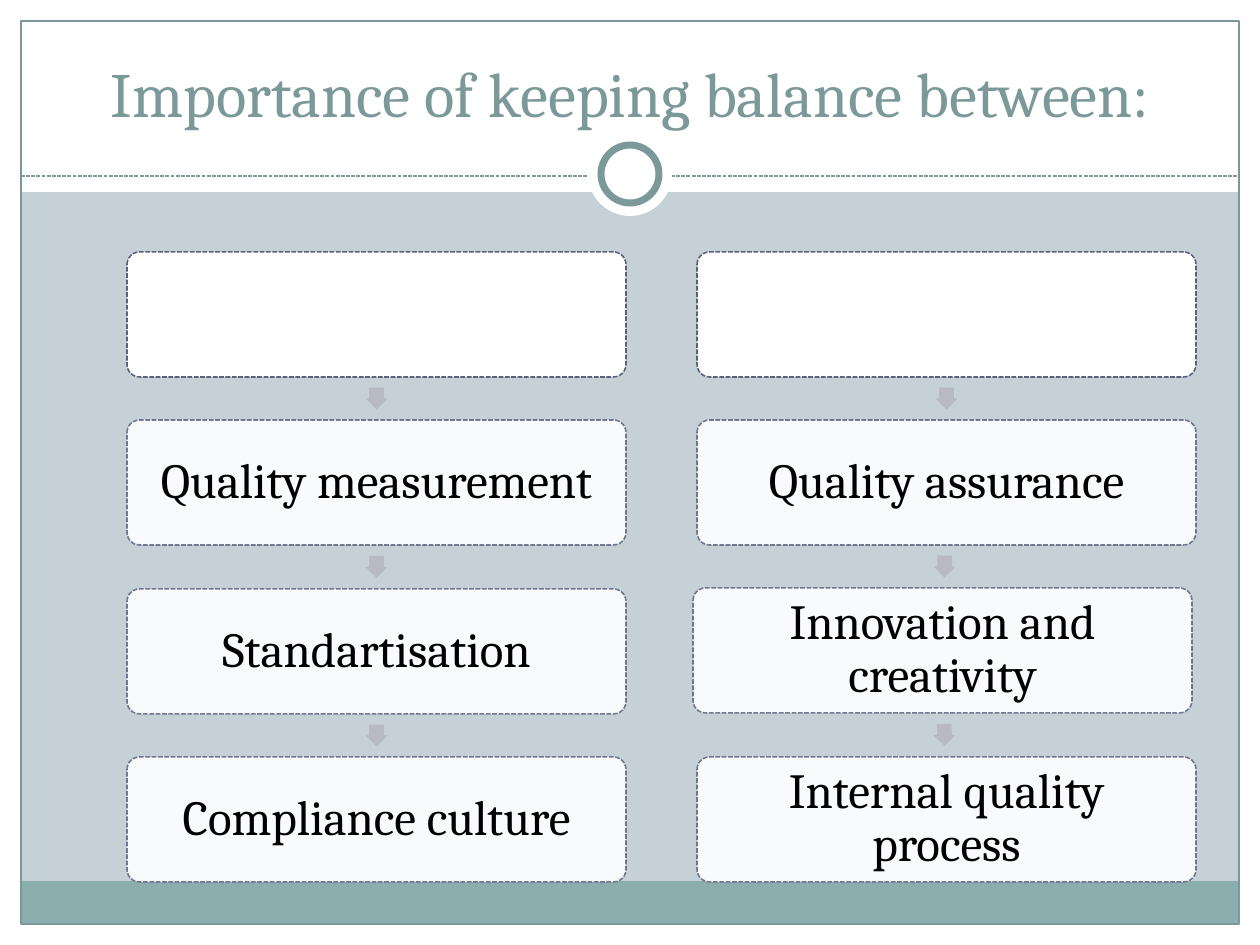
from math import atan2, degrees
from pptx import Presentation
from pptx.dml.color import RGBColor
from pptx.enum.dml import MSO_LINE
from pptx.enum.shapes import MSO_CONNECTOR, MSO_SHAPE as Preset
from pptx.enum.text import MSO_ANCHOR as Anchor, PP_ALIGN as Align
from pptx.oxml.ns import qn
from pptx.util import Emu, Pt
from lxml.etree import SubElement

PX = 914400 / 126
WIDTH, HEIGHT = 1260, 945
MARGIN = 21

WHITE = RGBColor(0xFF, 0xFF, 0xFF)
BLACK = RGBColor(0x00, 0x00, 0x00)
MIST = RGBColor(0xC5, 0xD1, 0xD7)
TEAL = RGBColor(0x7C, 0x99, 0x9A)
FOOTER = RGBColor(0x8C, 0xAD, 0xAE)
HEAD_EDGE = RGBColor(0x5B, 0x61, 0x7A)
STEP_EDGE = RGBColor(0x64, 0x6B, 0x86)
ARROW = RGBColor(0xB8, 0xBA, 0xC3)

COLUMNS = [
    (127, ["", "Quality measurement", "Standartisation", "Compliance culture"]),
    (697, ["", "Quality assurance", "Innovation and creativity", "Internal quality process"]),
]
NUDGES = {"Innovation and creativity": (-4, -1)}
BOX_WIDTH, BOX_HEIGHT = 499, 125
FIRST_TOP, PITCH = 252, 168.4
ARROW_SIZE = 22


def px(length):
    return Emu(round(length * PX))


def write(frame, text, size, color, font="Cambria", anchor=Anchor.MIDDLE, inset=9, spacing=1.0):
    frame.word_wrap = True
    frame.vertical_anchor = anchor
    frame.margin_left = frame.margin_right = px(inset)
    frame.margin_top = frame.margin_bottom = px(inset)
    para = frame.paragraphs[0]
    para.alignment = Align.CENTER
    para.line_spacing = spacing
    span = para.add_run()
    span.text = text
    span.font.name = font
    span.font.size = Pt(size)
    span.font.color.rgb = color


class Painter:
    def __init__(self, page):
        self.page = page

    def background(self, color):
        fill = self.page.background.fill
        fill.solid()
        fill.fore_color.rgb = color

    def shape(self, preset, left, top, width, height, fill=None, line=None, weight=0.75,
              dashed=False, alpha=None, adjust=(), rotation=0):
        shape = self.page.shapes.add_shape(preset, px(left), px(top), px(width), px(height))
        shape.shadow.inherit = False
        shape.rotation = rotation
        for index, value in enumerate(adjust):
            shape.adjustments[index] = value
        if fill is None:
            shape.fill.background()
        else:
            shape.fill.solid()
            shape.fill.fore_color.rgb = fill
        if line is None:
            shape.line.fill.background()
        else:
            self.stroke(shape.line, line, weight, dashed)
        if alpha is not None:
            for color in shape.element.spPr.iter(qn("a:srgbClr")):
                SubElement(color, qn("a:alpha"), val=str(alpha * 1000))
        return shape

    def stroke(self, line, color, weight, dashed):
        line.color.rgb = color
        line.width = Pt(weight)
        if dashed:
            line.dash_style = MSO_LINE.SQUARE_DOT

    def rule(self, left, right, y):
        rule = self.page.shapes.add_connector(
            MSO_CONNECTOR.STRAIGHT, px(left), px(y), px(right), px(y))
        self.stroke(rule.line, TEAL, 0.75, True)
        SubElement(rule.element.spPr, qn("a:effectLst"))

    def title(self, text, left, top, width, height):
        title = self.page.shapes.title
        title.left, title.top = px(left), px(top)
        title.width, title.height = px(width), px(height)
        title.element.getparent().append(title.element)
        write(title.text_frame, text, 36, TEAL, anchor=Anchor.BOTTOM, inset=6)

    def step(self, text, left, top):
        style = {"line": STEP_EDGE, "alpha": 90} if text else {"line": HEAD_EDGE}
        box = self.shape(Preset.ROUNDED_RECTANGLE, left, top, BOX_WIDTH, BOX_HEIGHT,
                         fill=WHITE, weight=0.9, dashed=True, adjust=(0.1,), **style)
        if text:
            write(box.text_frame, text, 28, BLACK, spacing=0.9)

    def arrow(self, start, end):
        middle_x = (start[0] + end[0] + BOX_WIDTH) / 2
        middle_y = (start[1] + end[1] + BOX_HEIGHT) / 2
        turn = degrees(atan2(end[1] - start[1], end[0] - start[0]))
        self.shape(Preset.RIGHT_ARROW, middle_x - ARROW_SIZE / 2, middle_y - ARROW_SIZE / 2,
                   ARROW_SIZE, ARROW_SIZE, fill=ARROW, adjust=(0.667, 0.5), rotation=turn)

    def column(self, left, texts):
        previous = None
        for row, text in enumerate(texts):
            shift_x, shift_y = NUDGES.get(text, (0, 0))
            corner = left + shift_x, round(FIRST_TOP + row * PITCH) + shift_y
            if previous:
                self.arrow(previous, corner)
            self.step(text, *corner)
            previous = corner


def main():
    deck = Presentation()
    deck.slide_width, deck.slide_height = px(WIDTH), px(HEIGHT)
    painter = Painter(deck.slides.add_slide(deck.slide_layouts[5]))
    painter.background(MIST)
    for area in [
        (0, HEIGHT - MARGIN, WIDTH, MARGIN),
        (0, 0, WIDTH, 192),
        (0, 0, MARGIN, HEIGHT),
        (WIDTH - MARGIN, 0, MARGIN, HEIGHT),
    ]:
        painter.shape(Preset.RECTANGLE, *area, fill=WHITE)
    inner = WIDTH - 2 * MARGIN
    painter.shape(Preset.RECTANGLE, MARGIN, 881, inner, 43, fill=FOOTER)
    painter.shape(Preset.RECTANGLE, MARGIN, MARGIN, inner, HEIGHT - 2 * MARGIN, line=TEAL)
    painter.rule(MARGIN, WIDTH - MARGIN, 176)
    painter.shape(Preset.OVAL, 588, 132, 84, 84, fill=WHITE)
    painter.shape(Preset.OVAL, 601, 145, 58, 58, fill=WHITE, line=TEAL, weight=4)
    painter.title("Importance of keeping balance between:", 42, 32, 1176, 104)
    for left, texts in COLUMNS:
        painter.column(left, texts)
    deck.save("out.pptx")


if __name__ == "__main__":
    main()
